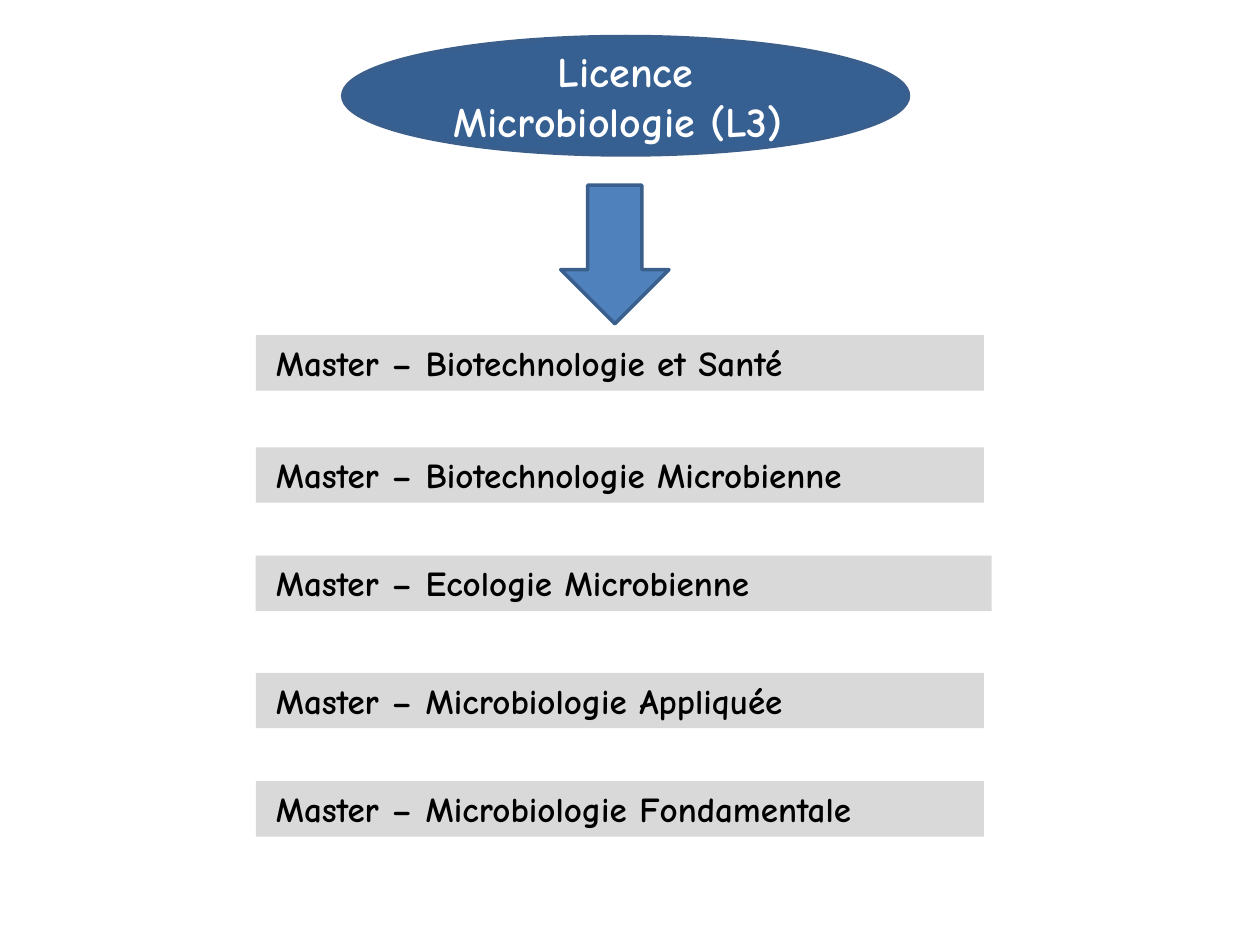
"""Build a slide leading from the microbiology degree to its five masters."""
from typing import NamedTuple

from pptx import Presentation
from pptx import util as u
from pptx.dml.color import RGBColor
from pptx.enum import shapes, text

COLUMNS, ROWS = 100, 75
FONT = "Comic Neue"
OUTLINE = "3A5F8C"

deck = Presentation()
deck.slide_width, deck.slide_height = u.Inches(10), u.Inches(7.5)
slide = deck.slides.add_slide(deck.slide_layouts[6])


class Box(NamedTuple):
    """Hold a place on the grid, in columns and rows."""
    column: float
    row: float
    width: float
    height: float


class Master(NamedTuple):
    """Hold one master's subject, its row and its bar width."""
    subject: str
    row: float
    width: float = 57.8


MASTERS = [
    Master("Biotechnologie et Santé", 26.6),
    Master("Biotechnologie Microbienne", 35.5),
    Master("Ecologie Microbienne", 44.1, 58.4),
    Master("Microbiologie Appliquée", 53.4),
    Master("Microbiologie Fondamentale", 62),
]


def colour(value: str) -> RGBColor:
    """Turn a hex string into a colour."""
    return RGBColor.from_string(value)


def draw(kind: shapes.MSO_SHAPE, box: Box, fill: str, outline: str = ""):
    """Draw a flat preset shape on the grid."""
    across, down = deck.slide_width / COLUMNS, deck.slide_height / ROWS
    figure = slide.shapes.add_shape(
        kind, round(box.column * across), round(box.row * down),
        round(box.width * across), round(box.height * down))
    figure.shadow.inherit = False
    figure.fill.solid()
    figure.fill.fore_color.rgb = colour(fill)
    if outline:
        figure.line.color.rgb = colour(outline)
        figure.line.width = u.Pt(2)
    else:
        figure.line.fill.background()
    return figure


def write(figure, words: str, size: float, ink: str,
          align: text.PP_ALIGN, anchor: text.MSO_ANCHOR) -> None:
    """Write bold words inside a shape."""
    frame = figure.text_frame
    frame.text = words
    frame.word_wrap = True
    frame.vertical_anchor = anchor
    paragraph = frame.paragraphs[0]
    paragraph.alignment = align
    font = paragraph.runs[0].font
    font.name, font.size, font.bold = FONT, u.Pt(size), True
    font.color.rgb = colour(ink)


def draw_master(master: Master) -> None:
    """Draw the grey bar of one master."""
    bar = draw(shapes.MSO_SHAPE.RECTANGLE,
               Box(20.3, master.row, master.width, 4.4), "D9D9D9")
    write(bar, f"Master – {master.subject}", 20, "000000",
          text.PP_ALIGN.LEFT, text.MSO_ANCHOR.TOP)
    bar.text_frame.margin_left = u.Inches(0.16)


def main() -> None:
    """Draw the degree, the arrow and the masters, then save."""
    licence = draw(shapes.MSO_SHAPE.OVAL, Box(27.2, 2.9, 44.9, 9.4), "376092", OUTLINE)
    write(licence, "Licence Microbiologie (L3) ", 24, "FFFFFF",
          text.PP_ALIGN.CENTER, text.MSO_ANCHOR.MIDDLE)
    draw(shapes.MSO_SHAPE.DOWN_ARROW, Box(44.5, 14.7, 8.6, 11), "4F81BD", OUTLINE)
    for master in MASTERS:
        draw_master(master)
    deck.save("out.pptx")


if __name__ == "__main__":
    main()
